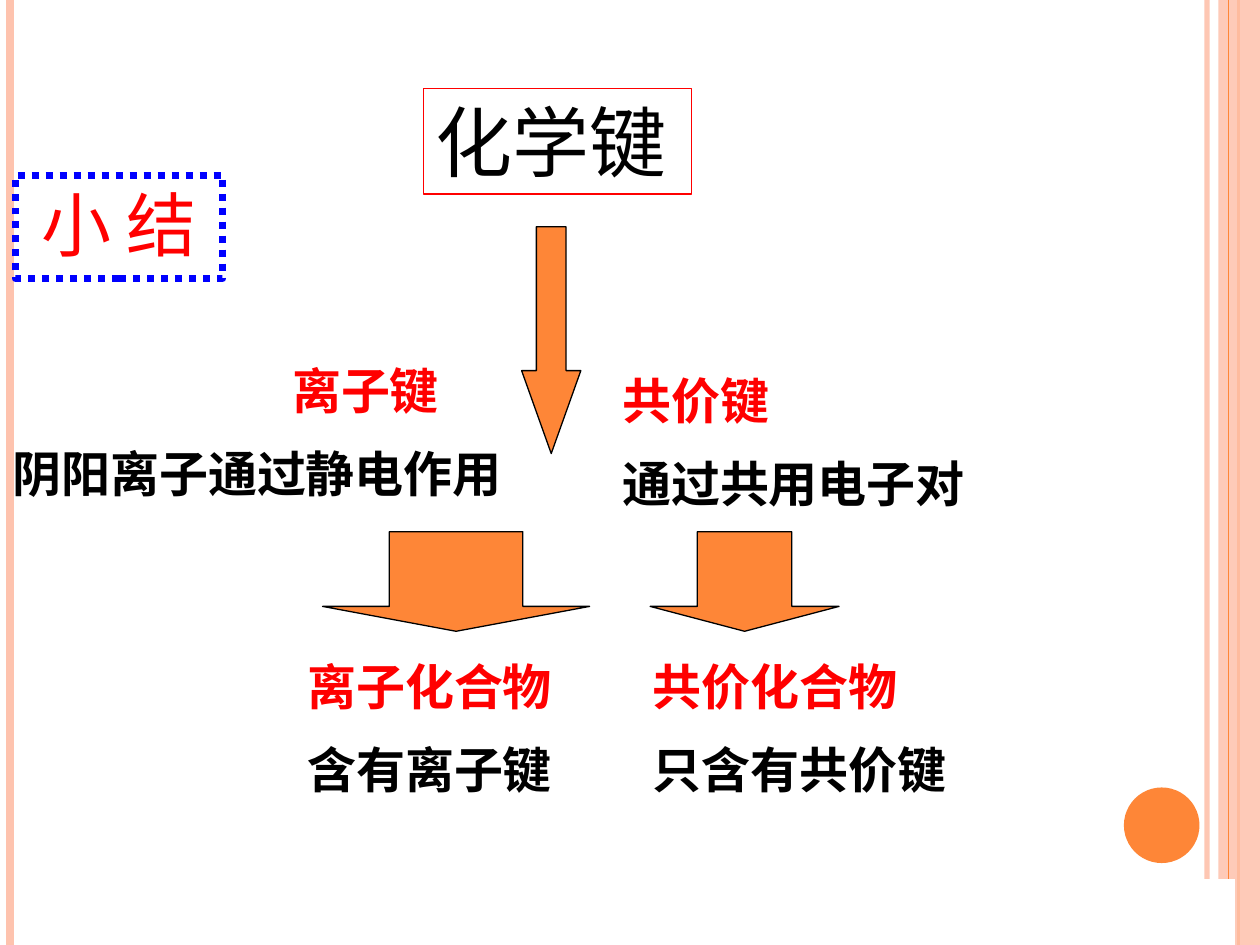
from pptx import Presentation
from pptx import util as u
from pptx.dml.color import RGBColor
from pptx.enum import dml, shapes, text
from pptx.oxml.ns import qn
from lxml import etree

COLORS = {"peach": "FEC3AE", "orange": "FE8637", "white": "FFFFFF",
          "red": "FF0000", "blue": "0000FF", "black": "000000"}


def paint(target, color, alpha=None):
    target.solid()
    target.fore_color.rgb = RGBColor.from_string(COLORS[color])
    if alpha:
        for node in target._xPr.iter(qn("a:srgbClr")):
            etree.SubElement(node, qn("a:alpha")).set("val", str(alpha * 1000))


def write(box, lines, size, bold=False, align=text.PP_ALIGN.LEFT):
    frame = box.text_frame
    settings = {"word_wrap": True, "auto_size": text.MSO_AUTO_SIZE.NONE,
                "vertical_anchor": text.MSO_ANCHOR.TOP}
    for name, value in settings.items():
        setattr(frame, name, value)
    for index, (words, color, indent) in enumerate(lines):
        para = frame.add_paragraph() if index else frame.paragraphs[0]
        para.alignment = align
        para.space_before = u.Pt(size / 2 if index else 0)
        if indent:
            para._p.get_or_add_pPr().set("marL", str(u.Inches(indent)))
        span = para.add_run()
        span.text = words
        for name, value in {"name": "Arial", "size": u.Pt(size), "bold": bold}.items():
            setattr(span.font, name, value)
        span.font.color.rgb = RGBColor.from_string(COLORS[color])


deck = Presentation()
deck.slide_width, deck.slide_height = u.Inches(10), u.Inches(7.5)
page = deck.slides.add_slide(deck.slide_layouts[5])

stripes = [(9.58, "peach", 3, 93), (0.08, "peach", 4.5, None),
           (9.83, "orange", 1.5, None), (9.75, "orange", 0.75, None)]
panels = [("RECTANGLE", 9.67, 0, 0.33, 7.5, "peach", 87),
          ("OVAL", 8.92, 6.25, 0.6, 0.6, "orange", None),
          ("ACTION_BUTTON_CUSTOM", 0.43, 6.98, 9.37, 0.52, "white", None)]

for index, (x, color, width, alpha) in enumerate(stripes):
    if index == 3:
        kind, left, top, wide, high, fill, opacity = panels[0]
        panel = page.shapes.add_shape(shapes.MSO_SHAPE[kind], *map(u.Inches, (left, top, wide, high)))
        panel.shadow.inherit = False
        paint(panel.fill, fill, opacity)
        panel.line.fill.background()
    stripe = page.shapes.add_connector(shapes.MSO_CONNECTOR.STRAIGHT, u.Inches(x), 0,
                                       u.Inches(x), deck.slide_height)
    paint(stripe.line.fill, color, alpha)
    stripe.line.width = u.Pt(width)
    etree.SubElement(stripe._element.spPr, qn("a:effectLst"))

for kind, left, top, wide, high, fill, opacity in panels[1:]:
    panel = page.shapes.add_shape(shapes.MSO_SHAPE[kind], *map(u.Inches, (left, top, wide, high)))
    panel.shadow.inherit = False
    paint(panel.fill, fill, opacity)
    panel.line.fill.background()

summary = page.shapes.add_shape(shapes.MSO_SHAPE.RECTANGLE,
                                *map(u.Inches, (0.12, 1.39, 1.65, 0.82)))
summary.shadow.inherit = False
summary.fill.background()
paint(summary.line.fill, "blue")
summary.line.width = u.Pt(4)
summary.line.dash_style = dml.MSO_LINE.ROUND_DOT
write(summary, [("小 结", "red", 0)], 40, align=text.PP_ALIGN.CENTER)

title = page.shapes.title
for name, value in {"left": 3.36, "top": 0.7, "width": 2.13, "height": 0.84}.items():
    setattr(title, name, u.Inches(value))
paint(title.line.fill, "red")
title.line.width = u.Pt(0.75)
write(title, [("化学键", "black", 0)], 44)

notes = [(0, 2.81, 4.69, "离子键", "阴阳离子通过静电作用", 2.22),
         (4.84, 2.89, 3.94, "共价键", "通过共用电子对", 0),
         (5.08, 5.16, 3.07, "共价化合物", "只含有共价键", 0),
         (2.34, 5.16, 2.42, "离子化合物", "含有离子键", 0)]
for left, top, width, heading, detail, indent in notes:
    box = page.shapes.add_textbox(*map(u.Inches, (left, top, width, 1.28)))
    write(box, [(heading, "red", indent), (detail, "black", 0)], 28, bold=True)

arrows = [(4.14, 1.8, 0.47, 1.8, 1.4), (5.16, 4.22, 1.5, 0.79, 0.25),
          (2.56, 4.22, 2.12, 0.79, 0.25)]
for left, top, width, height, head in arrows:
    arrow = page.shapes.add_shape(shapes.MSO_SHAPE.DOWN_ARROW,
                                  *map(u.Inches, (left, top, width, height)))
    arrow.shadow.inherit = False
    arrow.adjustments[0], arrow.adjustments[1] = 0.5, head
    paint(arrow.fill, "orange")
    paint(arrow.line.fill, "black")
    arrow.line.width = u.Pt(0.75)

deck.save("out.pptx")
